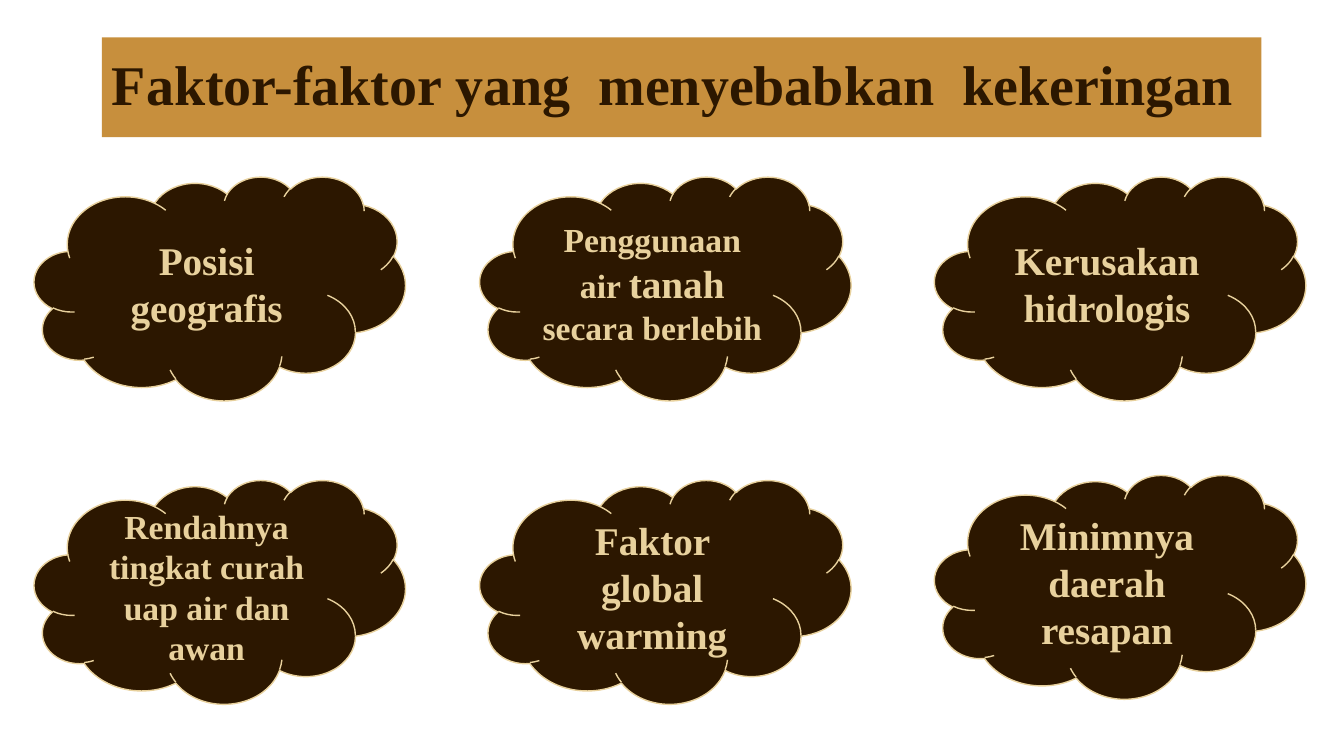
import pptx
import pptx.util
import pptx.dml.color
import pptx.enum.shapes
import pptx.enum.text
from dataclasses import dataclass

Inches = pptx.util.Inches
Pt = pptx.util.Pt
Align = pptx.enum.text.PP_ALIGN
Anchor = pptx.enum.text.MSO_ANCHOR


@dataclass
class Theme:
    font: str = "Times New Roman"
    dark: str = "2C1700"
    sand: str = "E8D19D"
    gold: str = "C78F3D"
    head: int = 40
    large: int = 28
    small: int = 24


def rgb(code):
    return pptx.dml.color.RGBColor.from_string(code)


def write(par, text, *, font, size, color, bold=True):
    run = par.add_run()
    run.text = text
    run.font.name = font
    run.font.size = Pt(size)
    run.font.bold = bold
    run.font.color.rgb = rgb(color)


class Deck:
    def __init__(self, theme):
        self.theme = theme
        self.show = pptx.Presentation()
        self.show.slide_width = Inches(13.33)
        self.show.slide_height = Inches(7.5)
        self.slide = self.show.slides.add_slide(self.show.slide_layouts[5])

    def fill(self, shape, color, align):
        """Fill the shape and return its first paragraph, ready for text."""
        shape.fill.solid()
        shape.fill.fore_color.rgb = rgb(color)
        frame = shape.text_frame
        frame.word_wrap = True
        frame.vertical_anchor = Anchor.MIDDLE
        par = frame.paragraphs[0]
        par.alignment = align
        return par

    def title(self, text, left, top, width, height):
        box = self.slide.shapes.title
        box.left, box.top = Inches(left), Inches(top)
        box.width, box.height = Inches(width), Inches(height)
        par = self.fill(box, self.theme.gold, Align.LEFT)
        box.text_frame.auto_size = pptx.enum.text.MSO_AUTO_SIZE.NONE
        par.line_spacing = 0.9
        write(par, text, font=self.theme.font, size=self.theme.head,
              color=self.theme.dark)

    def cloud(self, runs, left, top, width=3.68, height=2.22):
        shape = self.slide.shapes.add_shape(
            pptx.enum.shapes.MSO_SHAPE.CLOUD,
            Inches(left), Inches(top), Inches(width), Inches(height))
        shape.shadow.inherit = False
        shape.line.color.rgb = rgb(self.theme.sand)
        shape.line.width = Pt(1)
        par = self.fill(shape, self.theme.dark, Align.CENTER)
        for text, size in runs:
            write(par, text, font=self.theme.font, size=size,
                  color=self.theme.sand)


def main():
    theme = Theme()
    deck = Deck(theme)
    large, small = theme.large, theme.small

    # Title band
    deck.title("Faktor-faktor yang  menyebabkan  kekeringan",
               1.01, 0.37, 11.5, 0.99)

    # Causes: each column has its left edge, the tops of its two clouds
    # and their text
    columns = [
        (0.34, (1.75, 4.76), (
            [("Posisi geografis", large)],
            [("Rendahnya tingkat curah uap air dan awan", small)])),
        (4.76, (1.75, 4.76), (
            [("Penggunaan air ", small), ("tanah", large),
             (" secara berlebih", small)],
            [("Faktor global warming", large)])),
        (9.27, (1.75, 4.71), (
            [("Kerusakan hidrologis", large)],
            [("Minimnya daerah resapan", large)])),
    ]
    for left, tops, causes in columns:
        for top, runs in zip(tops, causes):
            deck.cloud(runs, left, top)

    deck.show.save("out.pptx")


if __name__ == "__main__":
    main()
